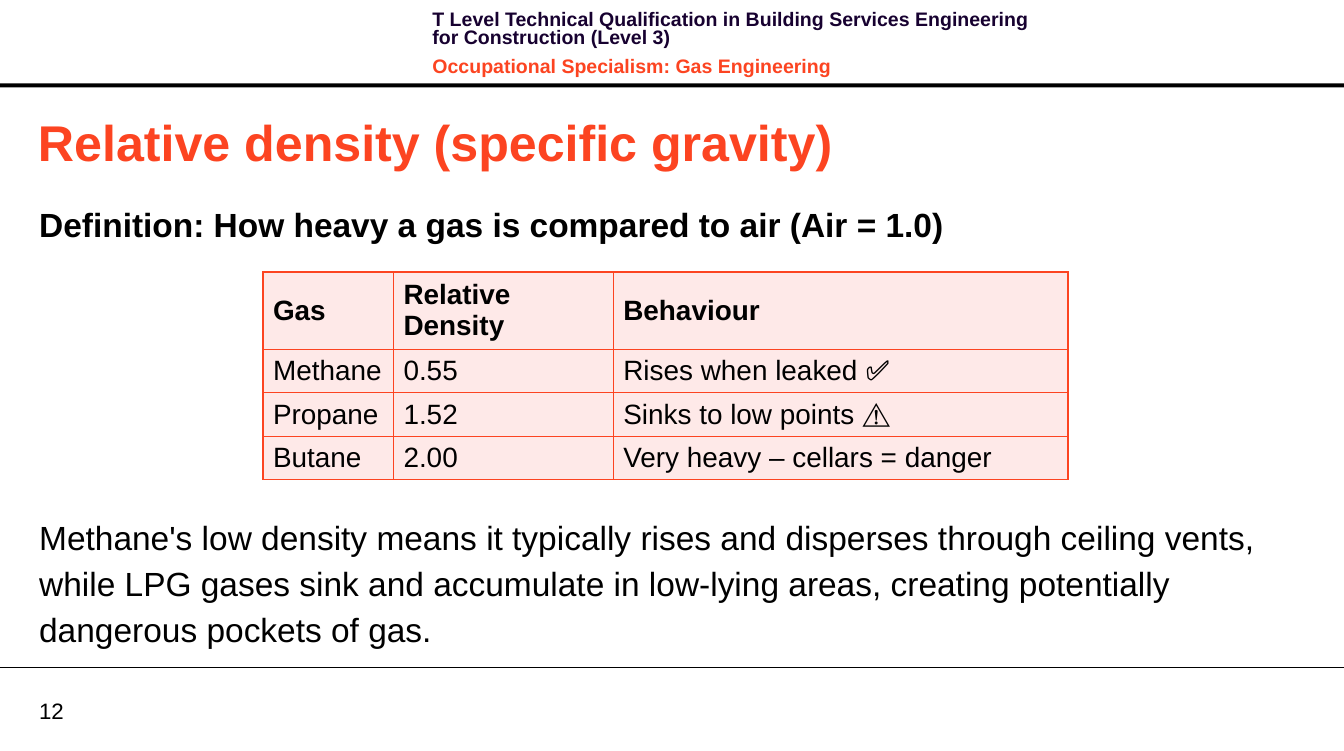
from lxml import etree
from pptx import Presentation
from pptx import util as u
from pptx.dml import color
from pptx.enum import shapes, text
from pptx.oxml import ns

COLOURS = {"black": "000000", "orange": "FC4421", "navy": "170130", "blush": "FEE9E8"}
EMU_PER_PX = 9144
WIDTH, HEIGHT = 1339, 748

GASES = [
    ["Gas", "Relative Density", "Behaviour"],
    ["Methane", "0.55", "Rises when leaked ✅"],
    ["Propane", "1.52", "Sinks to low points ⚠️"],
    ["Butane", "2.00", "Very heavy – cellars = danger"],
]
HEADER = [
    ("T Level Technical Qualification in Building Services Engineering "
     "for Construction (Level 3)", "navy"),
    ("Occupational Specialism: Gas Engineering", "orange"),
]
DEFINITION = "Definition: How heavy a gas is compared to air (Air = 1.0)"
EXPLANATION = ("Methane's low density means it typically rises and disperses through "
               "ceiling vents, while LPG gases sink and accumulate in low-lying areas, "
               "creating potentially dangerous pockets of gas.")


def px(length):
    return u.Emu(length * EMU_PER_PX)


def rgb(name):
    return color.RGBColor.from_string(COLOURS[name])


def apply(target, values):
    for name, value in values.items():
        setattr(target, name, value)


class Slide:
    font = "Arial"

    def __init__(self, deck):
        self.page = deck.slides.add_slide(deck.slide_layouts[6])

    def fill_para(self, para, words, size, colour="black", bold=False, **spacing):
        apply(para, spacing)
        span = para.add_run()
        span.text = words
        apply(span.font, {"name": self.font, "size": u.Pt(size), "bold": bold})
        span.font.color.rgb = rgb(colour)

    def text(self, place, lines, size, inset=(0, 0), anchor=text.MSO_ANCHOR.TOP,
             bold=False, gap=0, line_spacing=None):
        frame = self.page.shapes.add_textbox(*map(px, place)).text_frame
        side, top = map(px, inset)
        apply(frame, {"word_wrap": True, "vertical_anchor": anchor,
                      "margin_left": side, "margin_right": side,
                      "margin_top": top, "margin_bottom": top})
        for index, (words, colour) in enumerate(lines):
            para = frame.add_paragraph() if index else frame.paragraphs[0]
            self.fill_para(para, words, size, colour, bold, line_spacing=line_spacing,
                           space_before=u.Pt(gap if index else 0))

    def bar(self, place, colour):
        box = self.page.shapes.add_shape(shapes.MSO_SHAPE.RECTANGLE, *map(px, place))
        box.shadow.inherit = False
        box.fill.solid()
        box.fill.fore_color.rgb = rgb(colour)
        box.line.fill.background()

    def rule(self, top, colour, weight):
        line = self.page.shapes.add_connector(
            shapes.MSO_CONNECTOR.STRAIGHT, 0, px(top), px(WIDTH), px(top))
        line.line.color.rgb = rgb(colour)
        line.line.width = u.Pt(weight)
        etree.SubElement(line._element.spPr, ns.qn("a:effectLst"))

    def border(self, cell, colour, weight):
        props = cell._tc.get_or_add_tcPr()
        for index, side in enumerate(("lnL", "lnR", "lnT", "lnB")):
            edge = etree.Element(ns.qn(f"a:{side}"), w=str(u.Pt(weight)))
            fill = etree.SubElement(edge, ns.qn("a:solidFill"))
            etree.SubElement(fill, ns.qn("a:srgbClr"), val=COLOURS[colour])
            props.insert(index, edge)

    def table(self, left, top, widths, heights, rows, size):
        frame = self.page.shapes.add_table(
            len(rows), len(widths), px(left), px(top), px(sum(widths)), px(sum(heights)))
        table = frame.table
        apply(table, {"first_row": False, "horz_banding": False})
        for column, width in zip(table.columns, widths):
            column.width = px(width)
        for index, (row, height) in enumerate(zip(table.rows, heights)):
            row.height = px(height)
            for cell, words in zip(row.cells, rows[index]):
                cell.vertical_anchor = text.MSO_ANCHOR.MIDDLE
                cell.fill.solid()
                cell.fill.fore_color.rgb = rgb("blush")
                self.border(cell, "orange", 1)
                para = cell.text_frame.paragraphs[0]
                self.fill_para(para, words, size, bold=index == 0)


def main():
    deck = Presentation()
    apply(deck, {"slide_width": px(WIDTH), "slide_height": px(HEIGHT)})
    slide = Slide(deck)
    middle = text.MSO_ANCHOR.MIDDLE

    slide.bar((0, 83, WIDTH, 4), "black")
    slide.text((421, 7, 637, 64), HEADER, 14, inset=(10, 5), bold=True,
               gap=8, line_spacing=u.Pt(13.1))
    slide.text((28, 105, 1272, 71), [("Relative density (specific gravity)", "orange")],
               36, inset=(10, 5), anchor=middle, bold=True)
    slide.text((39, 197, 1272, 44), [(DEFINITION, "black")], 24,
               bold=True, line_spacing=1.15)
    slide.table(262, 271, [130, 219, 453], [73, 41, 41, 41], GASES, 20)
    slide.text((39, 509, 1272, 141), [(EXPLANATION, "black")], 24, line_spacing=1.15)
    slide.rule(665, "black", 0.75)
    slide.text((39, 694, 64, 27), [("12", "black")], 16, anchor=middle)

    deck.save("out.pptx")


if __name__ == "__main__":
    main()
